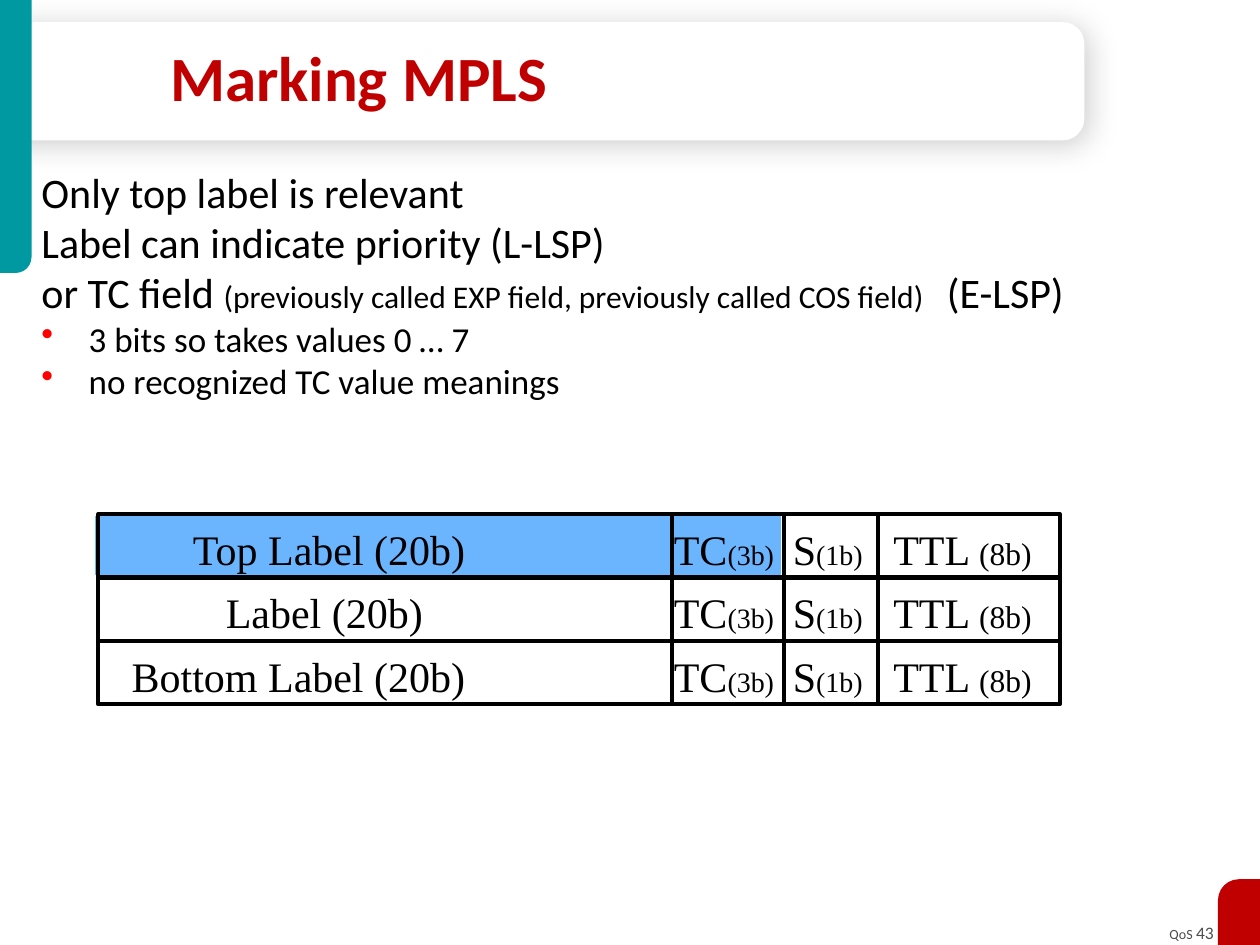
from lxml import etree
from pptx import Presentation, util as u
from pptx.dml.color import RGBColor
from pptx.enum import shapes, text
from pptx.oxml import ns

Pt = u.Pt
BLACK = RGBColor(0x00, 0x00, 0x00)
WHITE = RGBColor(0xFF, 0xFF, 0xFF)
GREY = RGBColor(0x4D, 0x4D, 0x4D)
TEAL = RGBColor(0x00, 0x98, 0xA1)
DARK_RED = RGBColor(0xC0, 0x00, 0x00)
RED = RGBColor(0xFF, 0x00, 0x00)
LIGHT_BLUE = RGBColor(0x6B, 0xB5, 0xFF)
SANS, SERIF = "Calibri", "Times New Roman"

ROW_LEFT, ROW_TOP, ROW_WIDTH, ROW_HEIGHT, ROW_PITCH = 56.2, 293.8, 549.4, 36, 36.4
DIVIDERS = (383.8, 448.2, 501.8)
FIELD_TABS = (321.8, 389.8, 447.2)
LABELS = (("Top Label (20b)", 47), ("Label (20b)", 65.8), ("Bottom Label (20b)", 12))
FIELDS = (("\tTC", 24), ("(3b)", 16), ("\tS", 24), ("(1b)", 16), ("\tTTL ", 24), ("(8b)", 18))


def add_element(parent, tag, **attributes):
    values = {name: str(value) for name, value in attributes.items()}
    return etree.SubElement(parent, ns.qn(tag), values)


class SlideBuilder:
    """Holds the line style and the current slide."""

    line_width = 2.25

    def __init__(self, slide):
        self.slide = slide

    def shape(self, kind, left, top, width, height, fill=None, line=None,
              line_width=line_width, flip=None, adjustments=()):
        shape = self.slide.shapes.add_shape(kind, Pt(left), Pt(top), Pt(width), Pt(height))
        shape.shadow.inherit = False
        if fill is None:
            shape.fill.background()
        else:
            shape.fill.solid()
            shape.fill.fore_color.rgb = fill
        if line is None:
            shape.line.fill.background()
        else:
            shape.line.color.rgb = line
            shape.line.width = Pt(line_width)
        for index, value in enumerate(adjustments):
            shape.adjustments[index] = value
        if flip:
            shape.element.spPr.get_or_add_xfrm().set(flip, "1")
        return shape

    def soft_shadow(self, shape):
        effects = shape.element.spPr.find(ns.qn("a:effectLst"))
        shadow = add_element(effects, "a:outerShdw", blurRad=Pt(17), dist=Pt(3),
                             dir=45 * 60000, algn="tl", rotWithShape=0)
        color = add_element(shadow, "a:srgbClr", val=BLACK)
        add_element(color, "a:alpha", val=19000)

    def line(self, x1, y1, x2, y2):
        connector = self.slide.shapes.add_connector(
            shapes.MSO_CONNECTOR.STRAIGHT, Pt(x1), Pt(y1), Pt(x2), Pt(y2))
        connector.line.color.rgb = BLACK
        connector.line.width = Pt(self.line_width)
        add_element(connector._element.spPr, "a:effectLst")

    def text_box(self, left, top, width, height, wrap=True):
        box = self.slide.shapes.add_textbox(Pt(left), Pt(top), Pt(width), Pt(height))
        box.text_frame.word_wrap = wrap
        return box.text_frame

    def title(self, words, left, top, width, height):
        title = self.slide.shapes.title
        title.left, title.top, title.width, title.height = map(Pt, (left, top, width, height))
        tree = title.element.getparent()
        tree.append(title.element)  # in front of the header panel
        frame = title.text_frame
        frame.auto_size = text.MSO_AUTO_SIZE.NONE
        frame.vertical_anchor = text.MSO_ANCHOR.MIDDLE
        paragraph = frame.paragraphs[0]
        paragraph.line_spacing = 0.85
        self.runs(paragraph, [(words, 36)], SANS, DARK_RED, bold=True)

    def runs(self, paragraph, parts, font, color, bold=False,
             align=text.PP_ALIGN.LEFT, tabs=()):
        """Add (words, size) parts to the paragraph, with tab stops in points."""
        paragraph.alignment = align
        for words, size in parts:
            run = paragraph.add_run()
            run.text = words
            run.font.name = font
            run.font.size = Pt(size)
            run.font.bold = bold
            run.font.color.rgb = color
        if tabs:
            stops = add_element(paragraph._p.get_or_add_pPr(), "a:tabLst")
            for position in tabs:
                add_element(stops, "a:tab", pos=Pt(position), algn="l")

    def bullet(self, paragraph, indent):
        properties = paragraph._p.get_or_add_pPr()
        properties.set("marL", str(Pt(indent)))
        properties.set("indent", str(-Pt(indent)))
        color = add_element(properties, "a:buClr")
        add_element(color, "a:srgbClr", val=RED)
        add_element(properties, "a:buChar", char="•")

    def label_row(self, top, label, label_tab):
        """Draw one label stack entry with its four fields."""
        row = self.shape(shapes.MSO_SHAPE.RECTANGLE, ROW_LEFT, top, ROW_WIDTH,
                         ROW_HEIGHT, line=BLACK)
        frame = row.text_frame
        frame.margin_top, frame.margin_bottom = Pt(3), Pt(0)
        frame.vertical_anchor = text.MSO_ANCHOR.MIDDLE
        self.runs(frame.paragraphs[0], [("\t" + label, 24), *FIELDS], SERIF, BLACK,
                  tabs=(label_tab, *FIELD_TABS))
        for x in DIVIDERS:
            self.line(x, top, x, top + ROW_HEIGHT)


def main():
    presentation = Presentation()
    presentation.slide_width, presentation.slide_height = Pt(720), Pt(540)
    builder = SlideBuilder(presentation.slides.add_slide(presentation.slide_layouts[5]))

    footer = builder.text_box(658.8, 523.4, 41.8, 19.4, wrap=False)
    builder.runs(footer.paragraphs[0], [("QoS ", 8), ("43", 10)], SANS, GREY,
                 align=text.PP_ALIGN.RIGHT)

    header = builder.shape(shapes.MSO_SHAPE.ROUND_2_SAME_RECTANGLE, 275.8, -263.5,
                           67.7, 619.9, fill=WHITE, adjustments=(0.184, 0))
    header.rotation = 90
    builder.soft_shadow(header)
    corner = shapes.MSO_SHAPE.ROUND_1_RECTANGLE
    builder.shape(corner, 0, 0, 18, 156, fill=TEAL, flip="flipV", adjustments=(0.5,))
    builder.shape(corner, 696, 502.4, 24, 37.6, fill=DARK_RED, flip="flipH", adjustments=(0.5,))
    builder.title("Marking MPLS", 90, 22.3, 522.7, 49.7)

    body = builder.text_box(16.6, 91.4, 673.9, 175.7)
    lines = (
        ([("Only top label is relevant", 24)], False, ()),
        ([("Label can indicate priority (L-LSP)", 24)], False, ()),
        ([("or TC field ", 24),
          ("(previously called EXP field, previously called COS field)", 18),
          ("\t(E-LSP)", 24)], False, (517.4,)),
        ([("3 bits so takes values 0 … 7", 20)], True, ()),
        ([("no recognized TC value meanings", 20)], True, ()),
    )
    for index, (parts, bulleted, tabs) in enumerate(lines):
        paragraph = body.add_paragraph() if index else body.paragraphs[0]
        if bulleted:
            builder.bullet(paragraph, 27)
        builder.runs(paragraph, parts, SANS, BLACK, tabs=tabs)

    builder.shape(shapes.MSO_SHAPE.RECTANGLE, 54.7, 295.2, 391, 33.1,
                  fill=LIGHT_BLUE, line=LIGHT_BLUE, line_width=0.75)
    for index, (label, label_tab) in enumerate(LABELS):
        builder.label_row(ROW_TOP + index * ROW_PITCH, label, label_tab)

    presentation.save("out.pptx")


if __name__ == "__main__":
    main()
